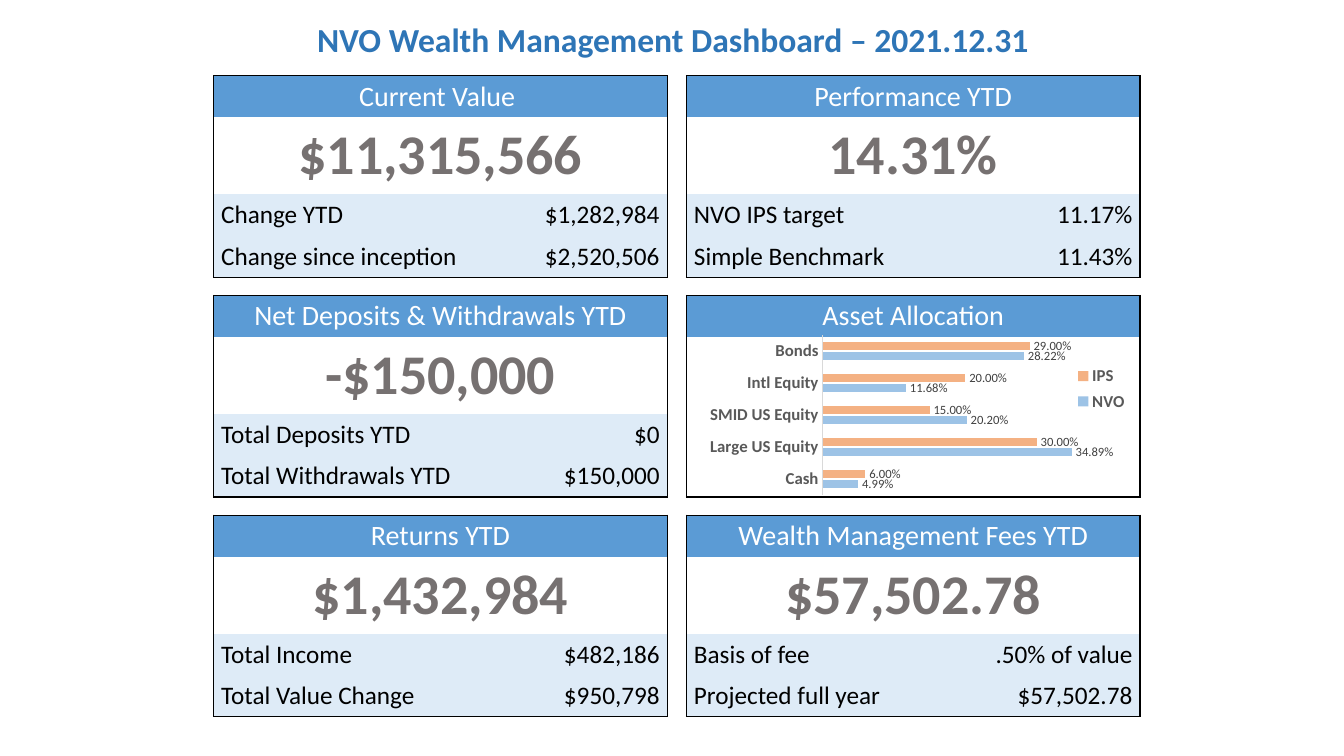
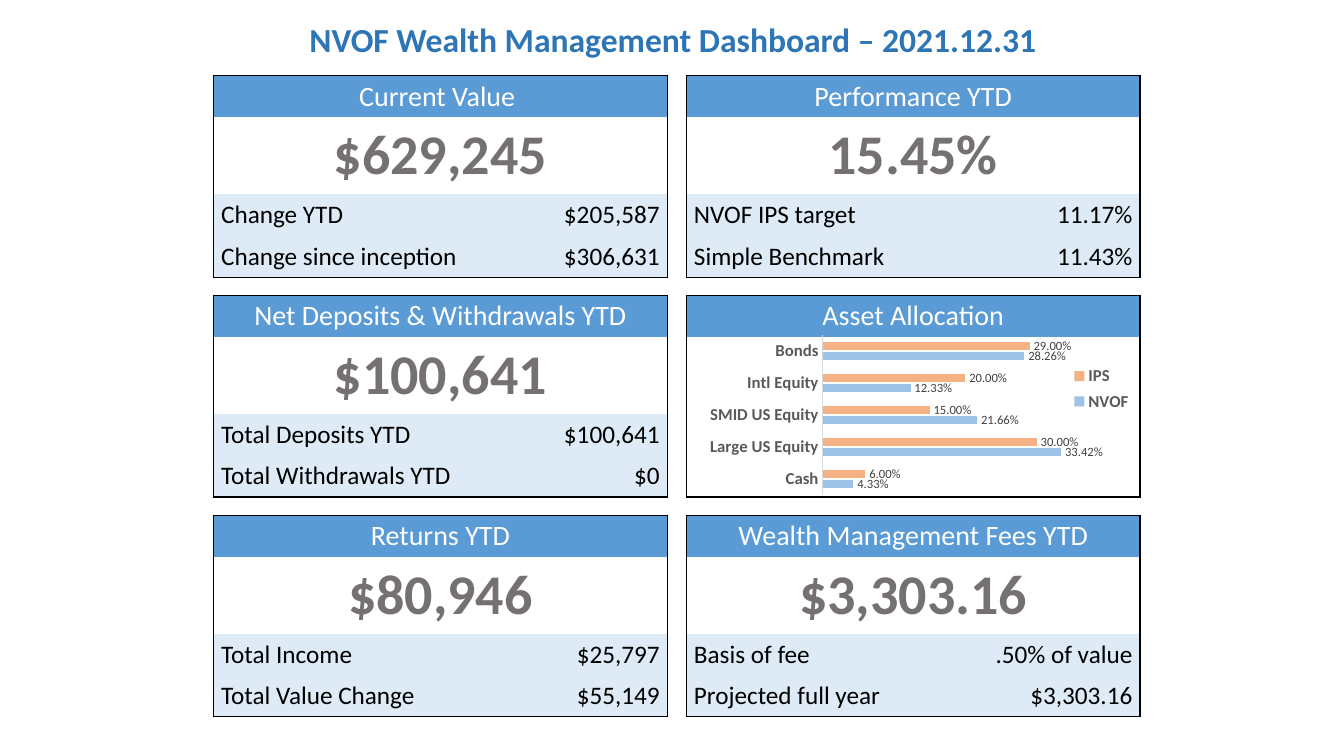
from lxml import etree
from pptx import Presentation
from pptx.chart.data import CategoryChartData
from pptx.dml.color import RGBColor
from pptx.enum.chart import XL_CHART_TYPE, XL_LABEL_POSITION, XL_LEGEND_POSITION, XL_TICK_MARK
from pptx.enum.text import MSO_ANCHOR, PP_ALIGN
from pptx.oxml import parse_xml
from pptx.oxml.ns import nsdecls, qn
from pptx.util import Pt

THEME = {
    "font": "Calibri",
    "fill": {"header": "5B9BD5", "detail": "DEEBF7", "portfolio": "9DC3E6", "IPS": "F4B183"},
    "line": {"border": "000000", "axis": "D9D9D9"},
    "text": {
        "title": ("2E75B6", {"size": Pt(24), "bold": True}),
        "header": ("FFFFFF", {"size": Pt(20), "bold": False}),
        "figure": ("767171", {"size": Pt(40), "bold": True}),
        "detail": ("000000", {"size": Pt(18), "bold": False}),
        "chart": ("000000", {"size": Pt(10), "bold": False}),
        "axis": ("595959", {"size": Pt(12), "bold": True}),
        "value": ("404040", {"size": Pt(9), "bold": False}),
    },
}
PERCENT = "0.00%"

# Dashboard grid, in points
LEFT, TOP = 152.6, 54
PANEL_W, PITCH_X, PITCH_Y = 324, 337.7, 157
COL_WIDTHS = [213.8, 110.2]
ROW_HEIGHTS = [29.6, 55.2, 29.6, 29.6]
CELL_FORMAT = {
    "margin_left": Pt(5.4), "margin_right": Pt(5.4),
    "margin_top": Pt(2.7), "margin_bottom": Pt(2.7),
    "vertical_anchor": MSO_ANCHOR.MIDDLE,
}

# Header and detail labels, row by row; the chart panel has no labels
PANELS = [
    ("Current Value ", "Change YTD", "Change since inception"),
    ("Performance YTD", "{} IPS target", "Simple Benchmark"),
    ("Net Deposits & Withdrawals YTD", "Total Deposits YTD", "Total Withdrawals YTD"),
    ("Asset Allocation", "", ""),
    ("Returns YTD", "Total Income", "Total Value Change"),
    ("Wealth Management Fees YTD", "Basis of fee", "Projected full year"),
]
ASSETS = ["Cash", "Large US Equity", "SMID US Equity", "Intl Equity", "Bonds"]
IPS = [0.06, 0.3, 0.15, 0.2, 0.29]

# Per portfolio: (figure, first detail, second detail) for each panel, and the allocation
PORTFOLIOS = {
    "NVO": (
        [("$11,315,566", "$1,282,984", "$2,520,506"), ("14.31%", "11.17%", "11.43%"),
         ("-$150,000", "$0", "$150,000"), ("", "", ""),
         ("$1,432,984", "$482,186", "$950,798"),
         ("$57,502.78", ".50% of value ", "$57,502.78")],
        [0.0499, 0.3489, 0.202, 0.1168, 0.2822],
    ),
    "NVOF": (
        [("$629,245", "$205,587", "$306,631"), ("15.45%", "11.17%", "11.43%"),
         ("$100,641", "$100,641", "$0"), ("", "", ""),
         ("$80,946", "$25,797", "$55,149"),
         ("$3,303.16", ".50% of value ", "$3,303.16")],
        [0.0433, 0.3342, 0.2166, 0.1233, 0.2826],
    ),
}


def style(font, role):
    color, values = THEME["text"][role]
    font.name = THEME["font"]
    font.color.rgb = RGBColor.from_string(color)
    for name, value in values.items():
        setattr(font, name, value)


def place(part, index, inner, **box):
    """Give a plot area or legend a fixed place, in fractions of the chart."""
    for old in part.findall(qn("c:layout")):
        part.remove(old)
    layout = parse_xml(f"<c:layout {nsdecls('c')}><c:manualLayout/></c:layout>")
    settings = {"layoutTarget": "inner"} if inner else {}
    settings.update(xMode="edge", yMode="edge", **box)
    for tag, value in settings.items():
        etree.SubElement(layout[0], qn(f"c:{tag}")).set("val", str(value))
    part.insert(index, layout)


prs = Presentation()
prs.slide_width, prs.slide_height = Pt(960), Pt(540)

for portfolio, (figures, allocation) in PORTFOLIOS.items():
    s = prs.slides.add_slide(prs.slide_layouts[6])

    title = s.shapes.add_textbox(Pt(LEFT), Pt(13.2), Pt(PITCH_X + PANEL_W), Pt(33.1))
    tf = title.text_frame
    tf.word_wrap = True
    tf.vertical_anchor = MSO_ANCHOR.MIDDLE
    p = tf.paragraphs[0]
    p.alignment, p.line_spacing = PP_ALIGN.CENTER, 0.9
    r = p.add_run()
    r.text = f"{portfolio} Wealth Management Dashboard – 2021.12.31 "
    style(r.font, "title")

    for i, ((header, *labels), (figure, *amounts)) in enumerate(zip(PANELS, figures)):
        x, y = LEFT + i % 2 * PITCH_X, TOP + i // 2 * PITCH_Y
        table = s.shapes.add_table(4, 2, Pt(x), Pt(y), Pt(PANEL_W), Pt(sum(ROW_HEIGHTS))).table
        table.first_row = table.horz_banding = False
        for col, width in zip(table.columns, COL_WIDTHS):
            col.width = Pt(width)
        for row, height in zip(table.rows, ROW_HEIGHTS):
            row.height = Pt(height)
        for row in range(2):
            table.cell(row, 0).merge(table.cell(row, 1))

        texts = [(header, ""), (figure, ""), *zip(labels, amounts)]
        for row, role in enumerate(["header", "figure", "detail", "detail"]):
            for col, text in enumerate(texts[row]):
                cell = table.cell(row, col)
                for name, value in CELL_FORMAT.items():
                    setattr(cell, name, value)

                merged = row < 2
                outer = {"L": col == 0, "R": col == 1 or merged, "T": row == 0, "B": row == 3}
                tc_pr = cell._tc.get_or_add_tcPr()
                for side, drawn in outer.items():
                    ln = etree.SubElement(tc_pr, qn(f"a:ln{side}"), w=str(Pt(1)))
                    paint = etree.SubElement(ln, qn("a:solidFill" if drawn else "a:noFill"))
                    if drawn:
                        etree.SubElement(paint, qn("a:srgbClr"), val=THEME["line"]["border"])

                if role == "header" or (role == "detail" and figure):
                    cell.fill.solid()
                    cell.fill.fore_color.rgb = RGBColor.from_string(THEME["fill"][role])
                else:
                    cell.fill.background()
                if text:
                    p = cell.text_frame.paragraphs[0]
                    side_align = PP_ALIGN.RIGHT if col else PP_ALIGN.LEFT
                    p.alignment = PP_ALIGN.CENTER if merged else side_align
                    r = p.add_run()
                    r.text = text.format(portfolio)
                    style(r.font, role)

    data = CategoryChartData(number_format=PERCENT)
    data.categories = ASSETS
    data.add_series(portfolio, allocation)
    data.add_series("IPS", IPS)
    chart = s.shapes.add_chart(
        XL_CHART_TYPE.BAR_CLUSTERED, Pt(LEFT + PITCH_X), Pt(TOP + PITCH_Y + 28),
        Pt(PANEL_W), Pt(115), data).chart
    chart.has_title = False
    style(chart.font, "chart")

    plot = chart.plots[0]
    plot.gap_width, plot.overlap, plot.vary_by_categories = 182, -33, False
    for series, fill in zip(plot.series, ["portfolio", "IPS"]):
        series.format.fill.solid()
        series.format.fill.fore_color.rgb = RGBColor.from_string(THEME["fill"][fill])
        labels = series.data_labels
        for name, value in {"show_value": True, "number_format": PERCENT,
                            "number_format_is_linked": False,
                            "position": XL_LABEL_POSITION.OUTSIDE_END}.items():
            setattr(labels, name, value)
        style(labels.font, "value")

    for name, value in {"visible": False, "has_major_gridlines": False,
                        "minimum_scale": 0, "maximum_scale": 0.4}.items():
        setattr(chart.value_axis, name, value)
    axis = chart.category_axis
    axis.major_tick_mark = XL_TICK_MARK.NONE
    axis.format.line.width = Pt(0.75)
    axis.format.line.color.rgb = RGBColor.from_string(THEME["line"]["axis"])
    style(axis.tick_labels.font, "axis")

    chart.has_legend = True
    legend = chart.legend
    legend.position, legend.include_in_layout = XL_LEGEND_POSITION.RIGHT, False
    style(legend.font, "axis")
    place(legend._element, 1, False, x=0.84, y=0.16, w=0.15, h=0.35)
    place(plot._element.getparent(), 0, True, x=0.3, y=0, w=0.63, h=1)

prs.save("out.pptx")
